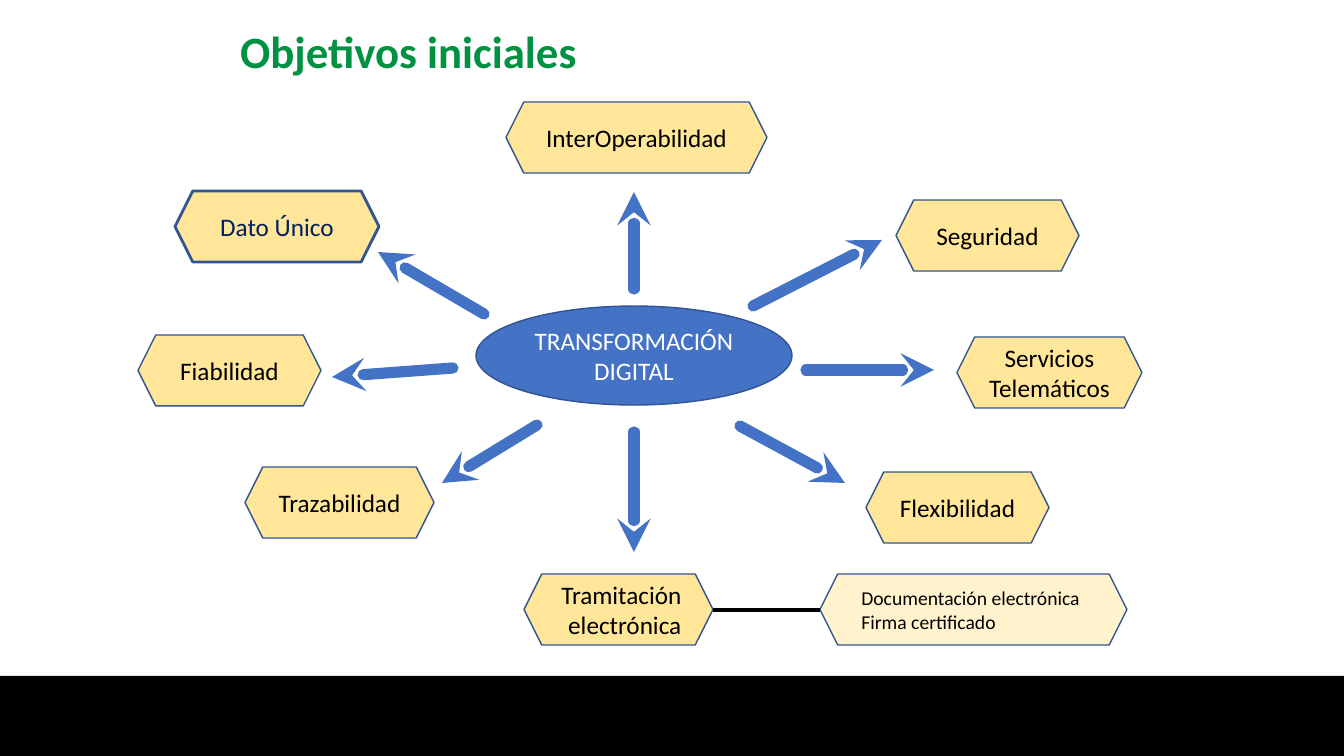
from dataclasses import dataclass

import lxml.etree
import pptx
import pptx.dml.color
import pptx.enum.shapes
import pptx.enum.text
import pptx.oxml.ns
import pptx.util

EMU_PER_PX = 12192000 / 1344
FONT = "Calibri"
COLOURS = {
    "title": "009242",
    "blue": "4472C4",
    "outline": "325491",
    "goal": "FFE699",
    "detail": "FFF2CC",
    "navy": "002060",
    "black": "000000",
    "white": "FFFFFF",
}
SHAPES = pptx.enum.shapes.MSO_SHAPE
ALIGN = pptx.enum.text.PP_ALIGN
ANCHOR = pptx.enum.text.MSO_ANCHOR


@dataclass
class Node:
    lines: list[str]
    left: int
    top: int
    width: int
    height: int = 71
    kind: SHAPES = SHAPES.HEXAGON
    fill: str = "goal"
    ink: str = "black"
    size: int = 18
    border: int = 1
    align: ALIGN = ALIGN.CENTER


@dataclass
class Link:
    start: tuple[int, int]
    end: tuple[int, int]
    colour: str = "blue"
    width: int = 8
    arrow: bool = True


NODES = [
    Node(["TRANSFORMACIÓN", "DIGITAL"], 476, 306, 316, 99, SHAPES.OVAL, "blue", "white"),
    Node(["Dato Único"], 175, 191, 204, ink="navy", border=2),
    Node(["Fiabilidad"], 138, 335, 183),
    Node(["Trazabilidad"], 245, 467, 189),
    Node(["Tramitación electrónica"], 524, 574, 189, align=ALIGN.RIGHT),
    Node(["Documentación electrónica", "Firma certificado"], 820, 574, 307,
         fill="detail", size=14, align=ALIGN.LEFT),
    Node(["Flexibilidad"], 866, 472, 183),
    Node(["Servicios Telemáticos"], 957, 337, 185),
    Node(["Seguridad"], 896, 200, 183),
    Node(["InterOperabilidad"], 506, 102, 261),
]

LINKS = [
    Link((713, 610), (820, 610), "black", 3, False),
    Link((634, 289), (634, 192)),
    Link((753, 306), (882, 240)),
    Link((806, 370), (934, 370)),
    Link((484, 314), (378, 252)),
    Link((453, 368), (332, 377)),
    Link((537, 425), (442, 483)),
    Link((634, 432), (634, 552)),
    Link((740, 426), (845, 483)),
]


def px(length: int) -> pptx.util.Emu:
    return pptx.util.Emu(round(length * EMU_PER_PX))


def colour(name: str) -> pptx.dml.color.RGBColor:
    return pptx.dml.color.RGBColor.from_string(COLOURS[name])


def set_font(para, size: int, ink: str, bold: bool = False) -> None:
    para.font.name = FONT
    para.font.size = pptx.util.Pt(size)
    para.font.bold = bold
    para.font.color.rgb = colour(ink)


def add_title(page, text: str) -> None:
    title = page.shapes.title
    title.left, title.top, title.width, title.height = map(px, (230, 34, 493, 49))
    frame = title.text_frame
    frame.text = text
    frame.auto_size = pptx.enum.text.MSO_AUTO_SIZE.NONE
    frame.vertical_anchor = ANCHOR.BOTTOM
    para = frame.paragraphs[0]
    para.alignment = ALIGN.LEFT
    para.line_spacing = 0.9
    set_font(para, 32, "title", True)


def add_footer_band(page) -> None:
    band = page.shapes.add_shape(SHAPES.RECTANGLE, *map(px, (0, 676, 1344, 80)))
    band.shadow.inherit = False
    band.fill.solid()
    band.fill.fore_color.rgb = colour("black")
    band.line.fill.background()


def add_node(page, node: Node) -> None:
    box = page.shapes.add_shape(
        node.kind, *map(px, (node.left, node.top, node.width, node.height)))
    box.shadow.inherit = False
    box.fill.solid()
    box.fill.fore_color.rgb = colour(node.fill)
    box.line.color.rgb = colour("outline")
    box.line.width = pptx.util.Pt(node.border)
    frame = box.text_frame
    frame.word_wrap = True
    frame.vertical_anchor = ANCHOR.MIDDLE
    frame.text = "\n".join(node.lines)
    for para in frame.paragraphs:
        para.alignment = node.align
        set_font(para, node.size, node.ink)


def add_link(page, link: Link) -> None:
    connector = page.shapes.add_connector(
        pptx.enum.shapes.MSO_CONNECTOR.STRAIGHT, *map(px, link.start + link.end))
    connector.line.color.rgb = colour(link.colour)
    connector.line.width = pptx.util.Pt(link.width)
    qualified = pptx.oxml.ns.qn
    properties = connector._element.spPr
    if link.arrow:
        outline = properties.find(qualified("a:ln"))
        outline.set("cap", "rnd")
        lxml.etree.SubElement(outline, qualified("a:tailEnd"), type="stealth")
    lxml.etree.SubElement(properties, qualified("a:effectLst"))


def main() -> None:
    deck = pptx.Presentation()
    deck.slide_width, deck.slide_height = px(1344), px(756)
    page = deck.slides.add_slide(deck.slide_layouts.get_by_name("Title Only"))
    add_footer_band(page)
    add_title(page, "Objetivos iniciales")
    for node in NODES:
        add_node(page, node)
    for link in LINKS:
        add_link(page, link)
    deck.save("out.pptx")


if __name__ == "__main__":
    main()
